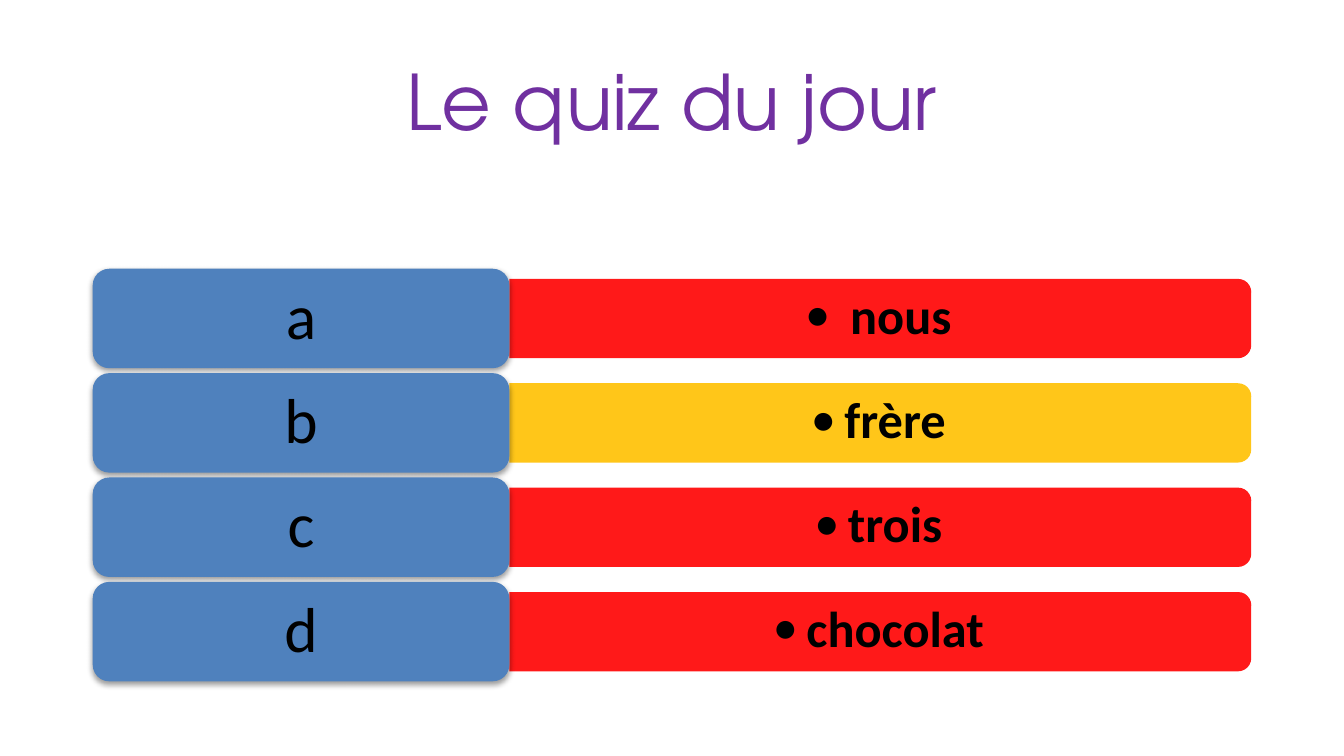
from lxml import etree
from pptx import Presentation
from pptx import util as u
from pptx.dml.color import RGBColor
from pptx.enum import shapes, text
from pptx.oxml import ns

PURPLE = RGBColor(0x70, 0x30, 0xA0)
BLUE = RGBColor(0x4F, 0x81, 0xBD)
RED = RGBColor(0xFF, 0x00, 0x00)
AMBER = RGBColor(0xFF, 0xC0, 0x00)
BLACK = RGBColor(0x00, 0x00, 0x00)

CHOICES = [("a", " nous", RED), ("b", "frère", AMBER),
           ("c", "trois", RED), ("d", "chocolat", RED)]

# Row geometry in inches
LEFT, SPLIT, RIGHT = 0.69, 3.79, 9.31
FIRST_TOP, LAST_TOP = 2.0, 4.33
LABEL_HEIGHT, BAR_HEIGHT = 0.74, 0.59
PITCH = (LAST_TOP - FIRST_TOP) / (len(CHOICES) - 1)


def add_xml(parent, tag, **attributes):
    return etree.SubElement(parent, ns.qn(tag), attributes)


def write(frame, words, size, font="Calibri", color=BLACK, bold=False,
          spacing=None, inset=None, bullet=None):
    frame.word_wrap = True
    frame.auto_size = text.MSO_AUTO_SIZE.NONE
    frame.vertical_anchor = text.MSO_ANCHOR.MIDDLE
    if inset:
        frame.margin_left = frame.margin_right = u.Inches(inset[0])
        frame.margin_top = frame.margin_bottom = u.Inches(inset[1])
    line = frame.paragraphs[0]
    line.alignment = text.PP_ALIGN.CENTER
    line.line_spacing = spacing
    if bullet:
        line.level = 1
        properties = line._p.get_or_add_pPr()
        properties.set("marL", str(u.Inches(0.25)))
        properties.set("indent", str(u.Inches(-0.25)))
        add_xml(properties, "a:buFont", typeface=font)
        add_xml(properties, "a:buChar", char=bullet)
    run = line.add_run()
    run.text = words
    run.font.name, run.font.size = font, u.Pt(size)
    run.font.bold, run.font.color.rgb = bold, color


class QuizSlide:
    label_style = dict(size=34, spacing=0.9, inset=(0.17, 0.1))
    answer_style = dict(size=27, bold=True, spacing=0.9, inset=(0.11, 0.06), bullet="•")

    def __init__(self, deck):
        self.slide = deck.slides.add_slide(deck.slide_layouts[5])

    def title(self, words):
        heading = self.slide.shapes.title
        heading.left, heading.top = u.Inches(LEFT), u.Inches(0.2)
        heading.width, heading.height = u.Inches(RIGHT - LEFT), u.Inches(1.09)
        write(heading.text_frame, words, 41, font="TeX Gyre Adventor", color=PURPLE)

    def block(self, preset, left, top, width, height, color):
        block = self.slide.shapes.add_shape(
            preset, *map(u.Inches, (left, top, width, height)))
        block.shadow.inherit = False
        block.fill.solid()
        block.fill.fore_color.rgb = color
        block.line.fill.background()
        return block

    def answer(self, words, middle, color):
        # The bar is turned so that its rounded end faces right
        length = RIGHT - SPLIT
        bar = self.block(shapes.MSO_SHAPE.ROUND_2_SAME_RECTANGLE,
                         (SPLIT + RIGHT - BAR_HEIGHT) / 2, middle - length / 2,
                         BAR_HEIGHT, length, color)
        bar.rotation = 90
        tint = bar._element.spPr.find(ns.qn("a:solidFill"))[0]
        add_xml(tint, "a:alpha", val="90000")
        # Upright text over the turned bar
        box = self.slide.shapes.add_textbox(
            *map(u.Inches, (SPLIT, middle - 0.27, 5.49, 0.53)))
        write(box.text_frame, words, **self.answer_style)

    def label(self, letter, top):
        label = self.block(shapes.MSO_SHAPE.ROUNDED_RECTANGLE, LEFT, top,
                           SPLIT - LEFT, LABEL_HEIGHT, BLUE)
        effects = label._element.spPr.find(ns.qn("a:effectLst"))
        shadow = add_xml(effects, "a:outerShdw", blurRad=str(u.Pt(3.1)),
                         dist=str(u.Pt(1.6)), dir="5400000", rotWithShape="0")
        add_xml(add_xml(shadow, "a:srgbClr", val=str(BLACK)), "a:alpha", val="38000")
        write(label.text_frame, letter, **self.label_style)


def main():
    deck = Presentation()
    # Widescreen, 16 to 9
    deck.slide_width = u.Inches(10)
    deck.slide_height = u.Inches(10 * 9 / 16)
    quiz = QuizSlide(deck)
    quiz.title("Le quiz du jour")

    # One row per choice: answer bar behind, letter in front
    for row, (letter, answer, color) in enumerate(CHOICES):
        top = FIRST_TOP + row * PITCH
        quiz.answer(answer, top + LABEL_HEIGHT / 2, color)
        quiz.label(letter, top)

    deck.save("out.pptx")


if __name__ == "__main__":
    main()
